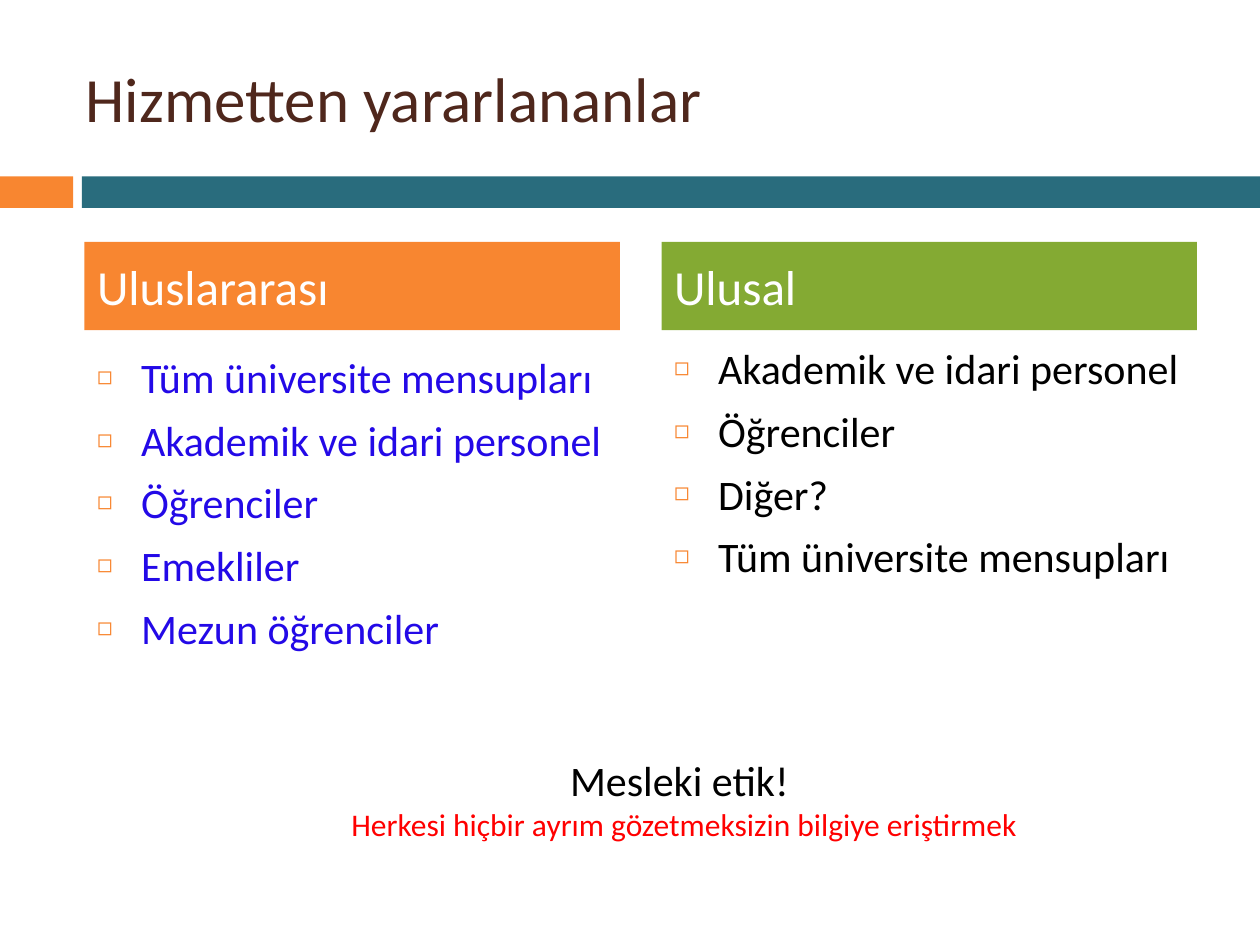
from dataclasses import dataclass

from lxml import etree
from pptx import Presentation, util as u
from pptx.dml.color import RGBColor
from pptx.enum import shapes, text
from pptx.oxml import ns

ORANGE, TEAL, GREEN = "F88630", "296C7D", "84AA33"
BROWN, BLUE, RED = "4F271C", "2309E7", "FF0000"
BLACK, WHITE = "000000", "FFFFFF"


@dataclass
class Column:
    """A coloured heading with a bulleted list below it."""
    heading: str
    fill: str
    items: list[str]
    color: str
    left: float
    list_top: float
    list_height: float
    heading_idx: int
    list_idx: int


COLUMNS = [
    Column("Uluslararası", ORANGE,
           ["Tüm üniversite mensupları", "Akademik ve idari personel",
            "Öğrenciler", "Emekliler", "Mezun öğrenciler"],
           BLUE, 0.67, 2.74, 3.27, 1, 2),
    Column("Ulusal", GREEN,
           ["Akademik ve idari personel", "Öğrenciler", "Diğer?",
            "Tüm üniversite mensupları"],
           BLACK, 5.25, 2.67, 3.19, 3, 4),
]


def rgb(color: str) -> RGBColor:
    """Turn a hex string into a colour."""
    return RGBColor.from_string(color)


def place(sp, left: float, top: float, width: float, height: float) -> None:
    """Move and size a shape, in inches."""
    sp.left, sp.top = u.Inches(left), u.Inches(top)
    sp.width, sp.height = u.Inches(width), u.Inches(height)


def paint(sp, color: str) -> None:
    """Fill a shape with one colour and no outline."""
    sp.fill.solid()
    sp.fill.fore_color.rgb = rgb(color)
    sp.line.fill.background()


def add_bullet(p) -> None:
    """Give a paragraph a small orange square bullet with a hanging indent."""
    pPr = p._p.get_or_add_pPr()
    pPr.set("marL", str(u.Inches(0.35)))
    pPr.set("indent", str(-u.Inches(0.35)))
    clr = etree.SubElement(pPr, ns.qn("a:buClr"))
    etree.SubElement(clr, ns.qn("a:srgbClr"), val=ORANGE)
    etree.SubElement(pPr, ns.qn("a:buSzPct"), val="60000")
    etree.SubElement(pPr, ns.qn("a:buChar"), char="◻")


def write(tf, lines: list[str], *, size: float, colors: list[str],
          sizes: list[float] | None = None, before: float = 0,
          align=text.PP_ALIGN.LEFT, anchor=text.MSO_ANCHOR.TOP,
          bullet: bool = False) -> None:
    """Write one paragraph per line in the given format."""
    tf.word_wrap = True
    tf.auto_size = text.MSO_AUTO_SIZE.NONE
    tf.vertical_anchor = anchor
    for i, line in enumerate(lines):
        p = tf.add_paragraph() if i else tf.paragraphs[0]
        p.alignment = align
        p.space_before = u.Pt(before)
        if bullet:
            add_bullet(p)
        r = p.add_run()
        r.text = line
        r.font.name = "Calibri"
        r.font.bold = False
        r.font.size = u.Pt(sizes[i] if sizes else size)
        r.font.color.rgb = rgb(colors[i % len(colors)])


def add_bar(s, left: float, width: float, color: str) -> None:
    """Draw one part of the band under the title."""
    sp = s.shapes.add_shape(shapes.MSO_SHAPE.RECTANGLE, 0, 0, 0, 0)
    place(sp, left, 1.4, width, 0.25)
    sp.shadow.inherit = False
    paint(sp, color)


def add_column(s, col: Column) -> None:
    """Fill the heading and list placeholders of one column."""
    holders = {sp.placeholder_format.idx: sp for sp in s.placeholders}
    heading, body = holders[col.heading_idx], holders[col.list_idx]
    place(heading, col.left, 1.92, 4.25, 0.7)
    paint(heading, col.fill)
    write(heading.text_frame, [col.heading], size=28, colors=[WHITE],
          before=7, anchor=text.MSO_ANCHOR.MIDDLE)
    place(body, col.left, col.list_top, 4.25, col.list_height)
    write(body.text_frame, col.items, size=24, colors=[col.color],
          before=7, bullet=True)


def main() -> None:
    """Build the slide and save it."""
    prs = Presentation()
    prs.slide_width, prs.slide_height = u.Inches(10), u.Inches(7.5)
    s = prs.slides.add_slide(prs.slide_layouts.get_by_name("Comparison"))

    add_bar(s, 0, 0.58, ORANGE)
    add_bar(s, 0.65, 9.35, TEAL)

    title = s.shapes.title
    place(title, 0.58, 0.3, 8.92, 0.95)
    write(title.text_frame, ["Hizmetten yararlananlar"], size=36,
          colors=[BROWN], anchor=text.MSO_ANCHOR.MIDDLE)

    for col in COLUMNS:
        add_column(s, col)

    note = s.shapes.add_textbox(0, 0, 0, 0)
    place(note, 1.17, 5.94, 8.52, 0.81)
    write(note.text_frame,
          ["Mesleki etik! ",
           "Herkesi hiçbir ayrım gözetmeksizin bilgiye eriştirmek"],
          size=24, sizes=[24, 18], colors=[BLACK, RED],
          align=text.PP_ALIGN.CENTER)

    prs.save("out.pptx")


if __name__ == "__main__":
    main()
